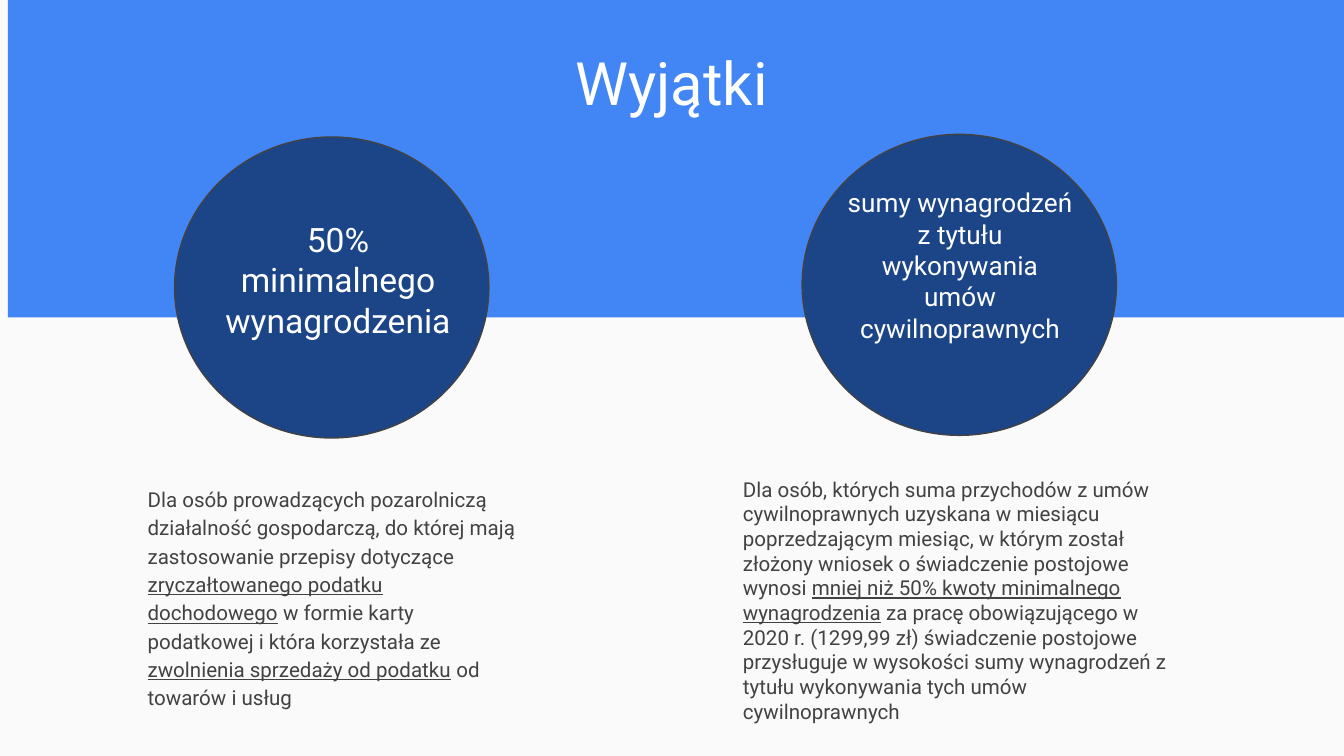
import pptx
import pptx.dml.color
import pptx.enum.shapes
import pptx.enum.text
import pptx.util
from pptx.util import Cm

FONT = "Roboto"
WHITE, GREY = "FFFFFF", "424242"
BLUE, NAVY, PAPER = "4285F4", "1C4587", "FAFAFA"
ALIGN = pptx.enum.text.PP_ALIGN
ANCHOR = pptx.enum.text.MSO_ANCHOR
SHAPE = pptx.enum.shapes.MSO_SHAPE

# Runs are pairs of text and underline
BUSINESS_RUNS = [
    ("Dla osób prowadzących pozarolniczą działalność gospodarczą, do której mają "
     "zastosowanie przepisy dotyczące ", False),
    ("zryczałtowanego podatku dochodowego", True),
    (" w formie karty podatkowej i która korzystała ze ", False),
    ("zwolnienia sprzedaży od podatku", True),
    (" od towarów i usług", False),
]
CONTRACT_RUNS = [
    ("Dla osób, których suma przychodów z umów cywilnoprawnych uzyskana w miesiącu "
     "poprzedzającym miesiąc, w którym został złożony wniosek o świadczenie "
     "postojowe wynosi ", False),
    ("mniej niż 50% kwoty minimalnego wynagrodzenia", True),
    (" za pracę obowiązującego w 2020 r. (1299,99 zł) świadczenie postojowe "
     "przysługuje w wysokości sumy wynagrodzeń z tytułu wykonywania tych umów "
     "cywilnoprawnych", False),
]


def set_color(color_format, value):
    color_format.rgb = pptx.dml.color.RGBColor.from_string(value)


def set_fill(fill, value):
    fill.solid()
    set_color(fill.fore_color, value)


def add_filled_shape(slide, kind, left, top, width, height, color, outline=None):
    shape = slide.shapes.add_shape(kind, Cm(left), Cm(top), Cm(width), Cm(height))
    shape.shadow.inherit = False
    set_fill(shape.fill, color)
    if outline:
        set_fill(shape.line.fill, outline)
        shape.line.width = pptx.util.Pt(0.75)
    else:
        shape.line.fill.background()


def write_text(shape, runs, size, color, align=ALIGN.LEFT, anchor=ANCHOR.TOP):
    frame = shape.text_frame
    frame.word_wrap = True
    frame.auto_size = pptx.enum.text.MSO_AUTO_SIZE.NONE
    frame.vertical_anchor = anchor
    frame.margin_left = frame.margin_right = Cm(0.25)
    frame.margin_top = frame.margin_bottom = Cm(0.25)
    paragraph = frame.paragraphs[0]
    paragraph.alignment = align
    paragraph.font.name = FONT
    paragraph.font.size = pptx.util.Pt(size)
    set_color(paragraph.font.color, color)
    for text, underlined in runs:
        run = paragraph.add_run()
        run.text = text
        if underlined:
            run.font.underline = True
    return paragraph


def add_text(slide, left, top, width, height, *text_options, **placement):
    box = slide.shapes.add_textbox(Cm(left), Cm(top), Cm(width), Cm(height))
    return write_text(box, *text_options, **placement)


def place_title(slide, text):
    title = slide.shapes.title
    title.left, title.top = Cm(0.86), Cm(0.61)
    title.width, title.height = Cm(23.67), Cm(3.48)
    write_text(title, [(text, False)], 32, WHITE, align=ALIGN.CENTER)
    # Bring the title in front of the banner
    title.element.getparent().append(title.element)


def main():
    presentation = pptx.Presentation()
    presentation.slide_width, presentation.slide_height = Cm(25.4), Cm(14.29)
    slide = presentation.slides.add_slide(presentation.slide_layouts[5])
    set_fill(slide.background.fill, PAPER)

    # Banner
    add_filled_shape(slide, SHAPE.RECTANGLE, 0.15, -1.32, 25.45, 7.32, BLUE)

    # Explanations
    business = add_text(slide, 2.54, 8.89, 7.49, 4.72, BUSINESS_RUNS, 11, GREY)
    business.line_spacing = 1.15
    business.space_after = pptx.util.Pt(16)
    add_text(slide, 13.79, 8.89, 8.71, 5.03, CONTRACT_RUNS, 11, GREY,
             anchor=ANCHOR.BOTTOM)

    place_title(slide, "Wyjątki")

    # Circles
    for left, top in ((3.3, 2.59), (15.16, 2.54)):
        add_filled_shape(slide, SHAPE.OVAL, left, top, 5.94, 5.69, NAVY, GREY)

    # Circle captions
    add_text(slide, 3.94, 3.89, 4.9, 3.02,
             [("50% minimalnego wynagrodzenia", False)], 18, WHITE, align=ALIGN.CENTER)
    add_text(slide, 15.77, 3.28, 4.75, 2.9,
             [("sumy wynagrodzeń z tytułu wykonywania umów cywilnoprawnych", False)],
             14, WHITE, align=ALIGN.CENTER)

    presentation.save("out.pptx")


if __name__ == "__main__":
    main()
